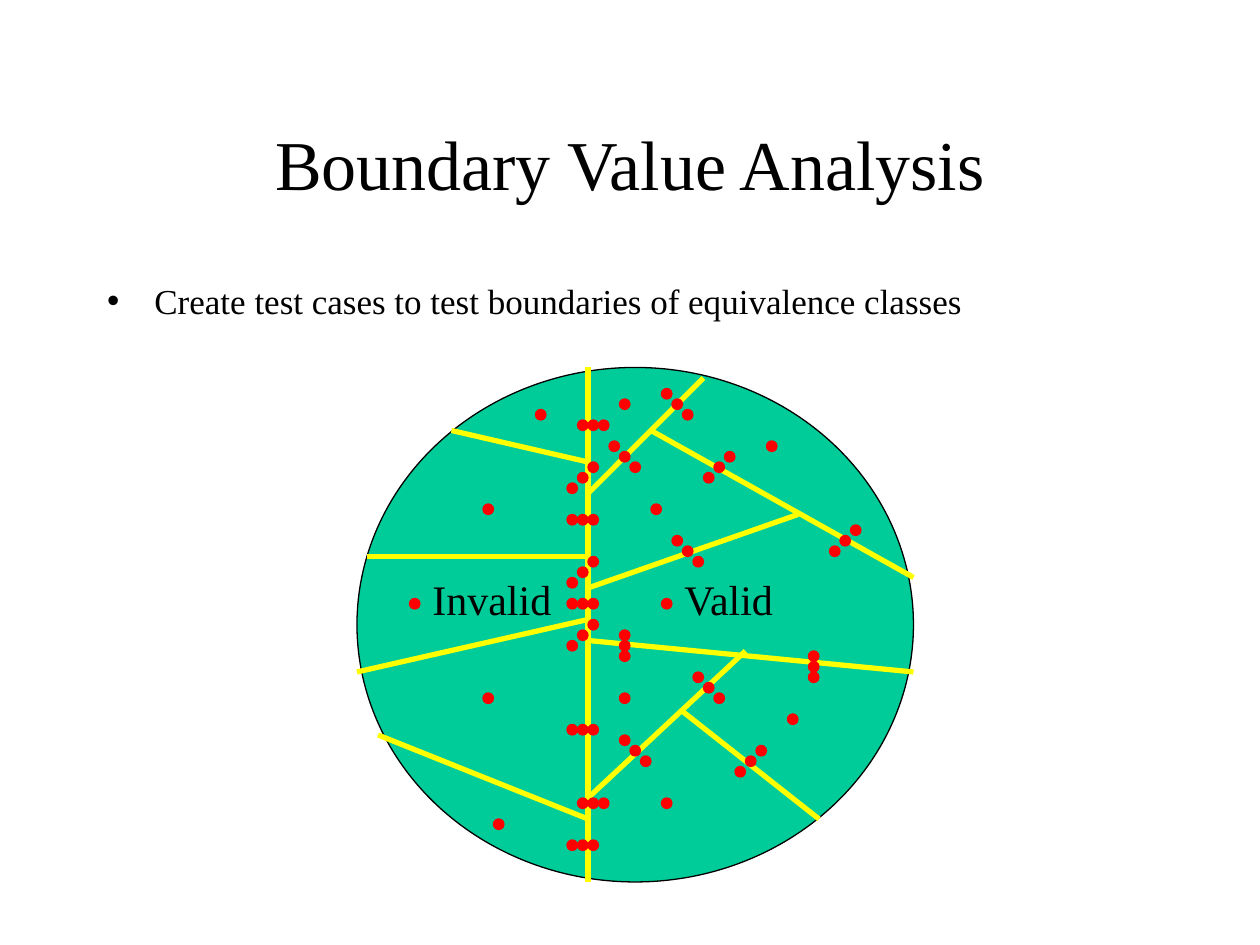
from pptx import Presentation
from pptx.dml.color import RGBColor
from pptx.enum.shapes import MSO_CONNECTOR, MSO_SHAPE
from pptx.enum.text import MSO_AUTO_SIZE
from pptx.oxml.ns import qn
from pptx.util import Emu, Pt
from lxml.etree import SubElement

EMU_PER_PX = 9525
FONT = "Times New Roman"
BLACK, GREEN, YELLOW, RED = "000000", "00CC99", "FFFF00", "FF0000"
DOT = 8
MID_X = 448

BORDERS = [
    (MID_X, 280, MID_X, 672),
    (536, 288, MID_X, 376),
    (496, 328, 696, 440),
    (608, 392, MID_X, 448),
    (MID_X, 488, 696, 512),
    (568, 496, MID_X, 608),
    (520, 542, 624, 624),
    (MID_X, 352, 344, 328),
    (MID_X, 424, 280, 424),
    (MID_X, 472, 272, 512),
    (MID_X, 624, 288, 560),
]
CLASS_DOTS = [
    (496, 384), (472, 304), (584, 336), (504, 456), (472, 528), (600, 544),
    (504, 608), (408, 312), (368, 384), (312, 456), (368, 528), (376, 624),
]
FALLING, RISING, VERTICAL, HORIZONTAL = (1, 1), (1, -1), (0, 1), (1, 0)
BOUNDARY_DOTS = {
    FALLING: [(472, 344), (520, 416), (536, 520), (480, 568), (512, 304)],
    RISING: [(544, 352), (640, 408), (568, 576)],
    VERTICAL: [(616, 504), (472, 488)],
    HORIZONTAL: [(448, 320), (440, 392), (440, 456), (440, 552), (448, 608), (440, 640)],
}
GROUPED_DOTS = [(440, 360), (440, 432), (440, 480)]


def px(*values):
    return [Emu(v * EMU_PER_PX) for v in values]


def color(value):
    return RGBColor.from_string(value)


def set_text(tf, text, size):
    tf.text = text
    p = tf.paragraphs[0]
    p.font.name = FONT
    p.font.size = Pt(size)
    p.font.color.rgb = color(BLACK)


def fill_placeholder(sp, box, text, size):
    sp.left, sp.top, sp.width, sp.height = px(*box)
    set_text(sp.text_frame, text, size)


def add_label(shapes, box, text):
    tf = shapes.add_textbox(*px(*box)).text_frame
    tf.word_wrap = False
    tf.auto_size = MSO_AUTO_SIZE.SHAPE_TO_FIT_TEXT
    set_text(tf, text, 24)


def add_ellipse(shapes, box, fill, line):
    sp = shapes.add_shape(MSO_SHAPE.OVAL, *px(*box))
    sp.shadow.inherit = False
    sp.fill.solid()
    sp.fill.fore_color.rgb = color(fill)
    sp.line.color.rgb = color(line)
    sp.line.width = Pt(0.75)


def add_border(shapes, ends):
    line = shapes.add_connector(MSO_CONNECTOR.STRAIGHT, *px(*ends))
    line.line.color.rgb = color(YELLOW)
    line.line.width = Pt(3)
    SubElement(line._element.spPr, qn("a:effectLst"))


def add_dot(shapes, x, y):
    add_ellipse(shapes, (x, y, DOT, DOT), RED, RED)


def add_triple(shapes, middle, direction):
    x, y = middle
    dx, dy = direction
    for step in (-DOT, 0, DOT):
        add_dot(shapes, x + step * dx, y + step * dy)


def main():
    prs = Presentation()
    prs.slide_width, prs.slide_height = px(960, 720)
    s = prs.slides.add_slide(prs.slide_layouts[1])
    shapes = s.shapes

    fill_placeholder(shapes.title, (72, 64, 816, 120), "Boundary Value Analysis", 40)
    fill_placeholder(s.placeholders[1], (72, 208, 816, 88),
                     "Create test cases to test boundaries of equivalence classes", 20)

    add_ellipse(shapes, (272, 280, 424, 392), GREEN, BLACK)
    for ends in BORDERS:
        add_border(shapes, ends)
    add_label(shapes, (512, 432, 92, 48), "Valid")
    add_label(shapes, (320, 432, 112, 48), "Invalid")

    for x, y in CLASS_DOTS:
        add_dot(shapes, x, y)
    for direction, middles in BOUNDARY_DOTS.items():
        for middle in middles:
            add_triple(shapes, middle, direction)
    for middle in GROUPED_DOTS:
        add_triple(shapes.add_group_shape().shapes, middle, RISING)

    prs.save("out.pptx")


if __name__ == "__main__":
    main()
